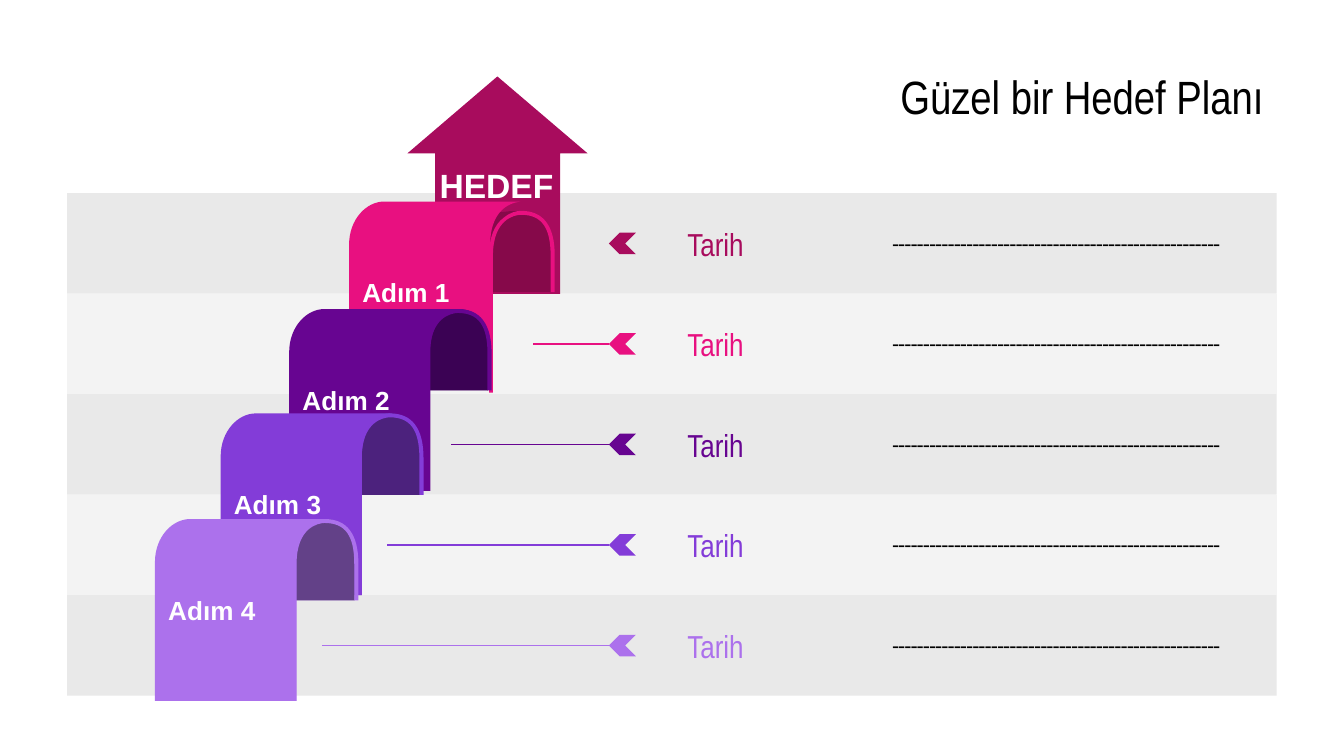
from lxml import etree
from pptx import Presentation
from pptx.dml.color import RGBColor
from pptx.enum import shapes as kinds, text as styles
from pptx.oxml.ns import qn
from pptx.util import Pt

WHITE = RGBColor(0xFF, 0xFF, 0xFF)
BLACK = RGBColor(0x00, 0x00, 0x00)
DARK_BAND = RGBColor(0xD9, 0xD9, 0xD9)
LIGHT_BAND = RGBColor(0xF3, 0xF3, 0xF3)
CRIMSON = RGBColor(0xA8, 0x0C, 0x5D)
PINK = RGBColor(0xE8, 0x10, 0x80)
PURPLE = RGBColor(0x67, 0x05, 0x91)
VIOLET = RGBColor(0x83, 0x3C, 0xD8)
LILAC = RGBColor(0xAC, 0x71, 0xEC)

LEFT, RIGHT = styles.PP_ALIGN.LEFT, styles.PP_ALIGN.RIGHT
ROW_LEFT, ROW_TOP, ROW_WIDTH, ROW_HEIGHT = 36, 103.5, 648, 53.85

# Outlines relative to their box: pairs are corners, sixes are Bézier curves.
ARROW = [(96.5, 41.2), (48.2, 0), (0, 41.2), (14.8, 41.2), (14.8, 116.5),
         (81.8, 116.5), (81.8, 41.2)]
INSIDE = [(46, 0), (25.2, 0, 0, 10, 0, 25), (0, 26, 11, 43.6, 21, 43.6),
          (63.4, 43.6), (63.4, 21), (63.4, 9.4, 60, 0, 46.6, 0),
          (46.4, 0, 46.2, 0, 46, 0)]
FRONT = [(18.8, 0), (9.4, 0, 0, 9.4, 0, 23.2), (0, 97.4), (75.6, 97.4),
         (75.6, 23.2), (75.6, 0.7, 91, 0.3, 91.8, 0),
         (91.8, 0, 34.3, 0, 18.8, 0)]
RIM = [(17.3, 0), (17, 0), (15, 0, 11.5, 0.7, 8, 3.6),
       (2.7, 7.4, 0, 14.6, 0, 24), (0, 97.4), (2.1, 97.4), (2.1, 24),
       (2.1, 4.4, 13.7, 2.2, 17, 2.1), (17.3, 2.1),
       (28, 2.2, 33, 8.6, 33, 24), (33, 43.6), (35.2, 43.6), (35.2, 24),
       (35.2, 7.9, 29, 0, 17.3, 0)]

# label, colour, left and top of the fold, left and top of the front
STEPS = [
    ("Adım 1", PINK, 231.8, 113, 187, 108),
    ("Adım 2", PURPLE, 198, 165.6, 154.9, 165.6),
    ("Adım 3", VIOLET, 161.5, 221.5, 118.2, 221.5),
    ("Adım 4", LILAC, 126.6, 278.1, 83, 278.1),
]
# colour and start of the leader line, if there is one
ROWS = [(CRIMSON, None), (PINK, 285.4), (PURPLE, 241.6),
        (VIOLET, 207.4), (LILAC, 172.6)]


def paint(shape, color, opacity=100):
    shape.shadow.inherit = False
    shape.line.fill.background()
    shape.fill.solid()
    shape.fill.fore_color.rgb = color
    if opacity < 100:
        tint = shape.fill._xPr.find(qn("a:solidFill"))[0]
        etree.SubElement(tint, qn("a:alpha"), val=str(opacity * 1000))


def write(shape, words, font, size, color, align=LEFT, bold=False, inset=7.2):
    frame = shape.text_frame
    frame.word_wrap = True
    frame.vertical_anchor = styles.MSO_ANCHOR.MIDDLE
    frame.margin_left = Pt(inset)
    frame.margin_right = frame.margin_top = frame.margin_bottom = Pt(7.2)
    paragraph = frame.paragraphs[0]
    paragraph.alignment = align
    run = paragraph.add_run()
    run.text = words
    run.font.name, run.font.size, run.font.bold = font, Pt(size), bold
    run.font.color.rgb = color


def add_label(slide, left, top, width, height, *style):
    box = slide.shapes.add_textbox(Pt(left), Pt(top), Pt(width), Pt(height))
    write(box, *style)


def bend(shape, outline):
    """Join the three segments made for each curve into one Bézier curve."""
    segments = iter(list(shape._element.iter(qn("a:lnTo"))))
    for part in outline[1:]:
        first = next(segments)
        if len(part) == 6:
            curve = etree.Element(qn("a:cubicBezTo"))
            first.addprevious(curve)
            for segment in (first, next(segments), next(segments)):
                curve.append(segment[0])
                segment.getparent().remove(segment)


def add_outline(slide, left, top, outline, color, opacity=100):
    points = [(Pt(left + part[i]), Pt(top + part[i + 1]))
              for part in outline for i in range(0, len(part), 2)]
    builder = slide.shapes.build_freeform(*points[0], scale=1.0)
    builder.add_line_segments(points[1:], close=True)
    shape = builder.convert_to_shape()
    bend(shape, outline)
    paint(shape, color, opacity)
    return shape


def add_band(slide, left, top, width, height, dark):
    corners = [(0, 0), (0, height), (width, height), (width, 0)]
    color, opacity = (DARK_BAND, 57) if dark else (LIGHT_BAND, 100)
    add_outline(slide, left, top, corners, color, opacity)


def add_goal(slide, left, top):
    arrow = add_outline(slide, left, top, ARROW, CRIMSON)
    write(arrow, "HEDEF", "Arial", 18, WHITE, bold=True, inset=17.2)


def add_step(slide, label, color, left, top, front_left, front_top):
    """Draw one ribbon: shaded inside of the fold, front with label, rim."""
    add_outline(slide, left, top, INSIDE, color)
    add_outline(slide, left, top, INSIDE, BLACK, 42)
    front = add_outline(slide, front_left, front_top, FRONT, color)
    write(front, label, "Arial", 14, WHITE, bold=True)
    add_outline(slide, left + 30.2, top, RIM, color)


def add_leader(slide, start, end, y, color):
    line = slide.shapes.add_connector(kinds.MSO_CONNECTOR.STRAIGHT,
                                      Pt(end), Pt(y), Pt(start), Pt(y))
    line.line.color.rgb = color
    line.line.width = Pt(0.75)
    etree.SubElement(line._element.spPr, qn("a:effectLst"))


def add_row(slide, left, top, height, color, leader_start):
    middle = top + height / 2
    tip = left + 290.2
    add_label(slide, left + 325.1, middle - 12.2, 94.3, 24.4,
              "Tarih", "Arial Narrow", 17, color)
    add_label(slide, left + 423.4, middle - 19, 201.6, 38,
              "-" * 53, "Roboto", 12, BLACK, RIGHT)
    chevron = slide.shapes.add_shape(kinds.MSO_SHAPE.CHEVRON, Pt(tip),
                                     Pt(middle - 5.75), Pt(14.4), Pt(11.5))
    chevron.rotation = 180
    paint(chevron, color)
    if leader_start is not None:
        add_leader(slide, leader_start, tip, middle, color)


def main():
    deck = Presentation()
    deck.slide_width, deck.slide_height = Pt(720), Pt(405)
    slide = deck.slides.add_slide(deck.slide_layouts[6])

    add_label(slide, 36, 32, 648, 38.2,
              "Güzel bir Hedef Planı", "Arial Narrow", 25, BLACK, RIGHT)
    tops = [ROW_TOP + i * ROW_HEIGHT for i in range(len(ROWS))]
    for i, top in enumerate(tops):
        add_band(slide, ROW_LEFT, top, ROW_WIDTH, ROW_HEIGHT, i % 2 == 0)
    add_goal(slide, 218.3, 41)
    for step in STEPS:
        add_step(slide, *step)
    for top, row in zip(tops, ROWS):
        add_row(slide, ROW_LEFT, top, ROW_HEIGHT, *row)

    deck.save("out.pptx")


if __name__ == "__main__":
    main()
